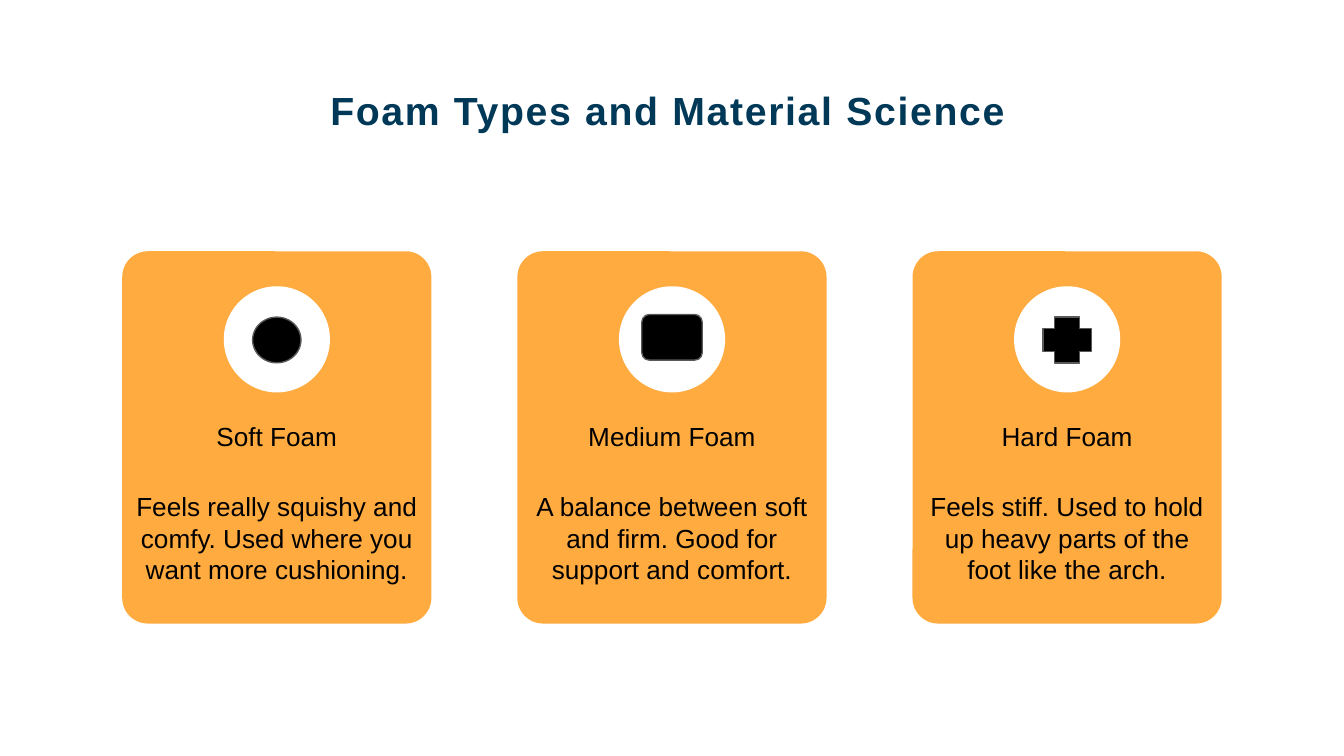
from pptx import Presentation
from pptx import util as u
from pptx.dml import color
from pptx.enum import shapes, text

COLOURS = {"navy": "003857", "orange": "FFAB40", "white": "FFFFFF",
           "black": "000000", "grey": "595959"}
SHAPE = shapes.MSO_SHAPE

PAGE_WIDTH = 10
PAGE_HEIGHT = PAGE_WIDTH * 9 / 16
CARD_LEFT, CARD_TOP, CARD_WIDTH, CARD_HEIGHT = 0.91, 1.87, 2.3, 2.77
CARD_PITCH = 2.94
DISC_SIZE = 0.79

# heading, description, icon shape, icon adjustment, icon width, icon offset
FOAMS = [
    ("Soft Foam",
     "Feels really squishy and comfy. Used where you want more cushioning.",
     SHAPE.OVAL, None, 0.36, 0.49),
    ("Medium Foam",
     "A balance between soft and firm. Good for support and comfort.",
     SHAPE.ROUNDED_RECTANGLE, 0.167, 0.45, 0.47),
    ("Hard Foam",
     "Feels stiff. Used to hold up heavy parts of the foot like the arch.",
     SHAPE.CROSS, 0.25, 0.36, 0.49),
]


def rgb(name):
    return color.RGBColor.from_string(COLOURS[name])


def add_figure(page, kind, box, fill, line=None, adjustment=None):
    figure = page.shapes.add_shape(kind, *map(u.Inches, box))
    figure.shadow.inherit = False
    figure.fill.solid()
    figure.fill.fore_color.rgb = rgb(fill)
    if line:
        figure.line.color.rgb = rgb(line)
        figure.line.width = u.Pt(0.75)
    else:
        figure.line.fill.background()
    if adjustment is not None:
        figure.adjustments[0] = adjustment


def add_text(page, box, words, colour="black", **formats):
    """Add a centred paragraph at the top of its box; return it and its run."""
    frame = page.shapes.add_textbox(*map(u.Inches, box)).text_frame
    settings = {"word_wrap": True, "vertical_anchor": text.MSO_ANCHOR.TOP}
    for side in ("left", "top", "right", "bottom"):
        settings[f"margin_{side}"] = u.Inches(0.1)
    for name, value in settings.items():
        setattr(frame, name, value)
    para = frame.paragraphs[0]
    para.alignment = text.PP_ALIGN.CENTER
    span = para.add_run()
    span.text = words
    for name, value in {"name": "Arial", "size": u.Pt(14), **formats}.items():
        setattr(span.font, name, value)
    span.font.color.rgb = rgb(colour)
    return para, span


def add_title(page, box):
    para, span = add_text(page, box, "Foam Types and Material Science",
                          "navy", size=u.Pt(21), bold=True)
    para.line_spacing = 1.15
    span._r.get_or_add_rPr().set("spc", "90")


def add_card(page, box, foam):
    left, top, width, height = box
    heading, description, icon, adjustment, icon_width, icon_offset = foam
    middle = left + width / 2
    add_figure(page, SHAPE.ROUNDED_RECTANGLE, box, "orange", adjustment=0.083)
    add_text(page, (left, top + 1.68, width, 0.79), description)
    add_text(page, (left, top + 1.16, width, 0.42), heading)
    add_figure(page, SHAPE.OVAL,
               (middle - DISC_SIZE / 2, top + 0.26, DISC_SIZE, DISC_SIZE), "white")
    add_figure(page, icon,
               (middle - icon_width / 2, top + icon_offset, icon_width, 0.34),
               "black", "grey", adjustment)


def main():
    deck = Presentation()
    deck.slide_width, deck.slide_height = map(u.Inches, (PAGE_WIDTH, PAGE_HEIGHT))
    page = deck.slides.add_slide(deck.slide_layouts[6])
    add_title(page, (0.38, 0.49, 9.18, 0.75))
    for index, foam in enumerate(FOAMS):
        left = CARD_LEFT + index * CARD_PITCH
        add_card(page, (left, CARD_TOP, CARD_WIDTH, CARD_HEIGHT), foam)
    deck.save("out.pptx")


if __name__ == "__main__":
    main()
